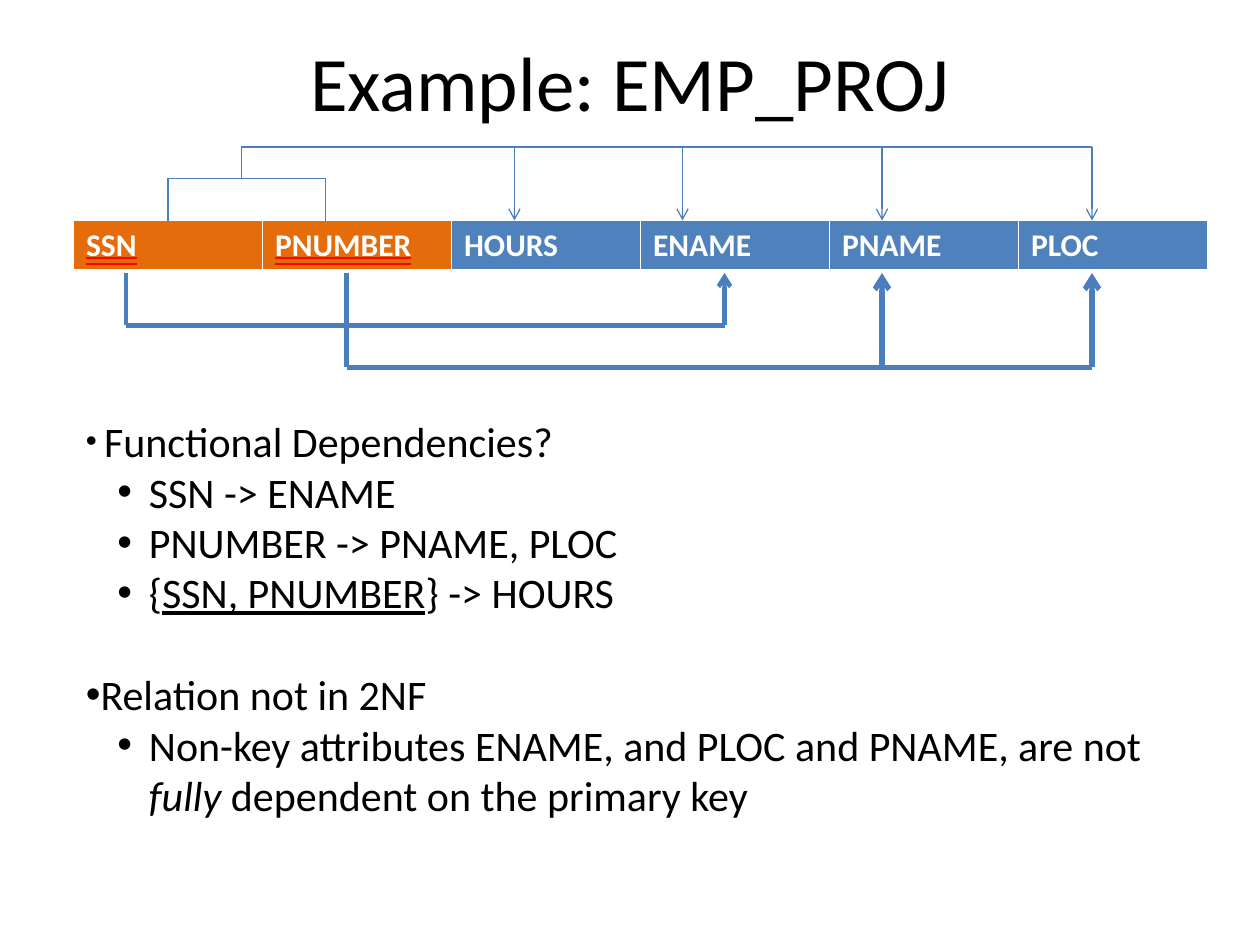
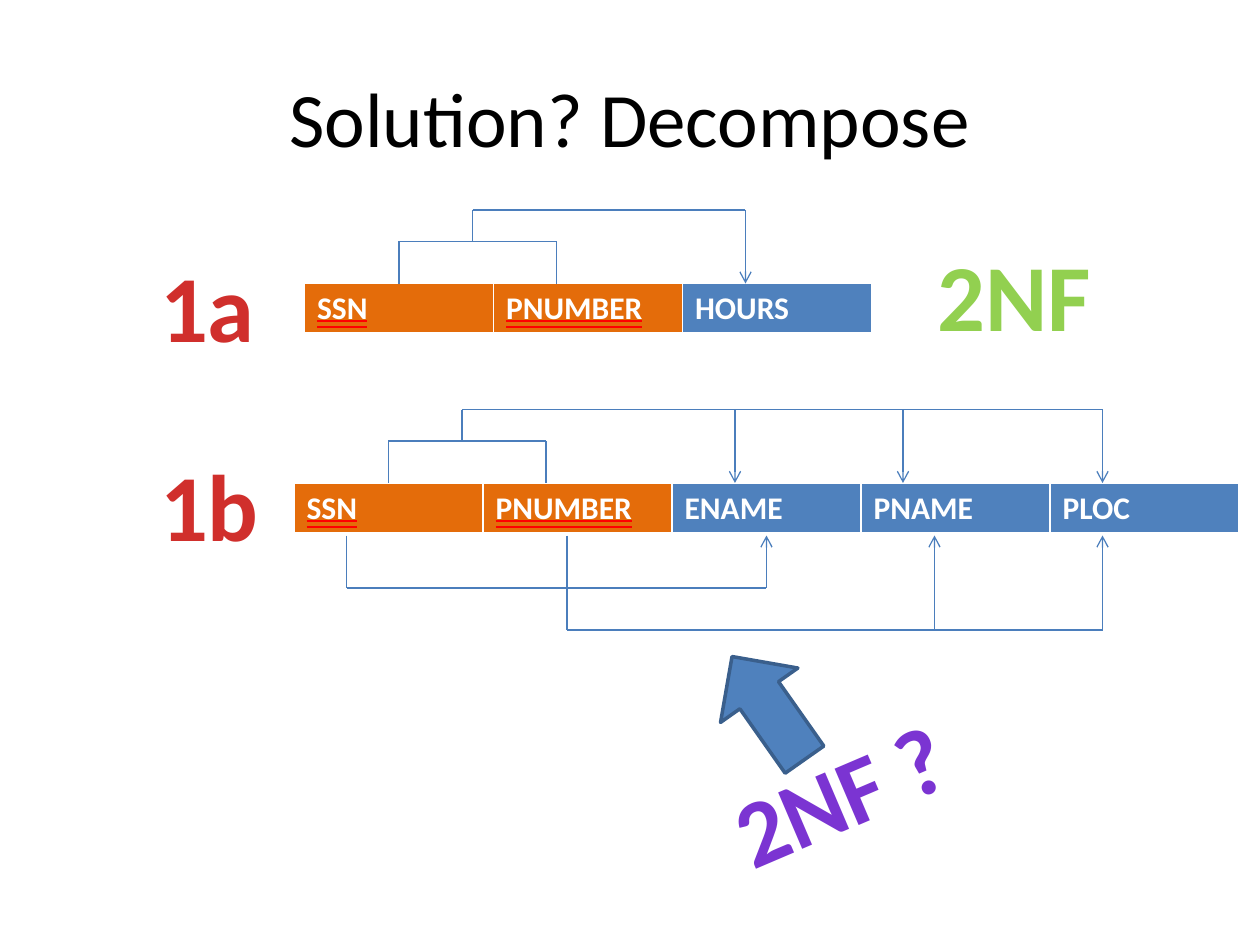
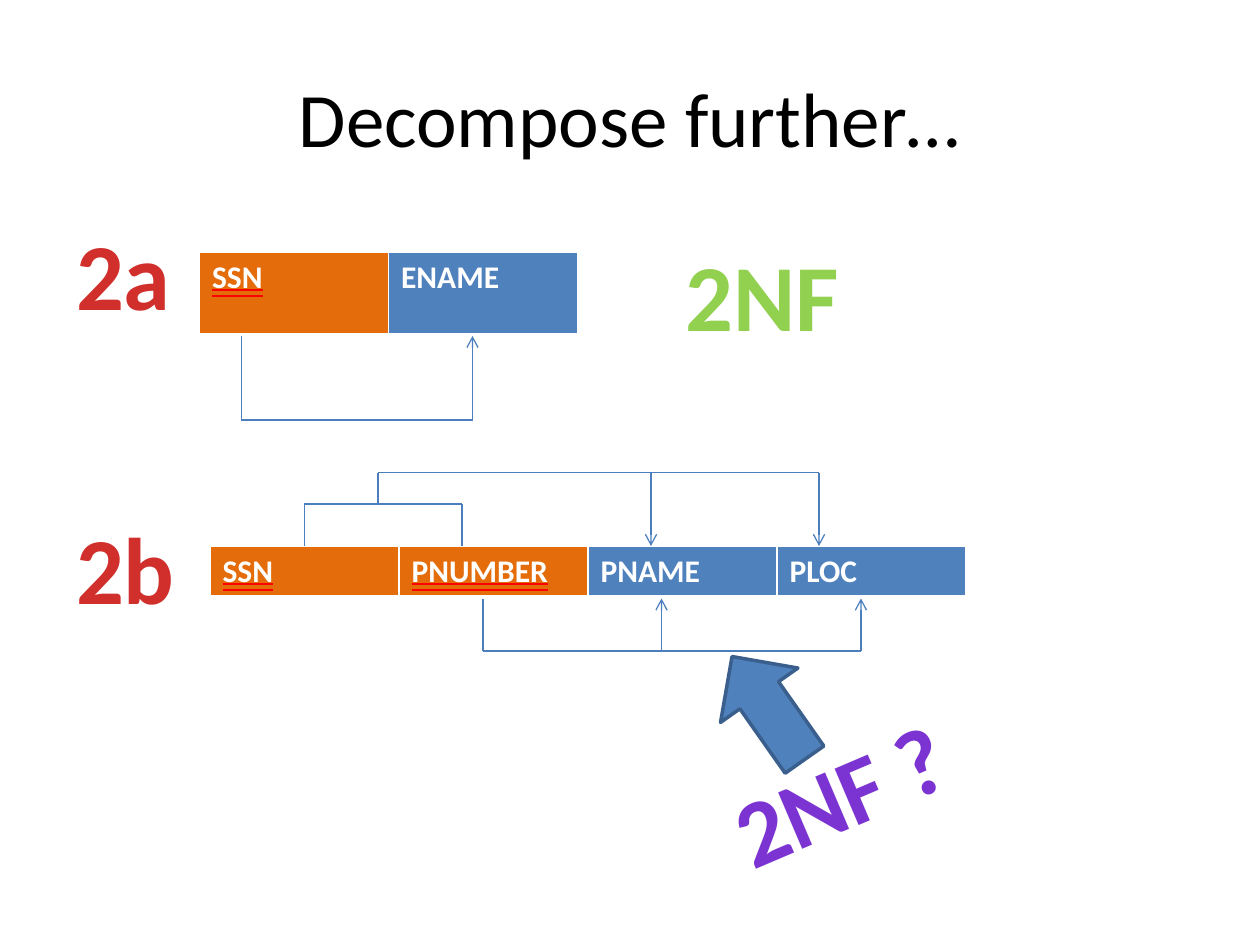
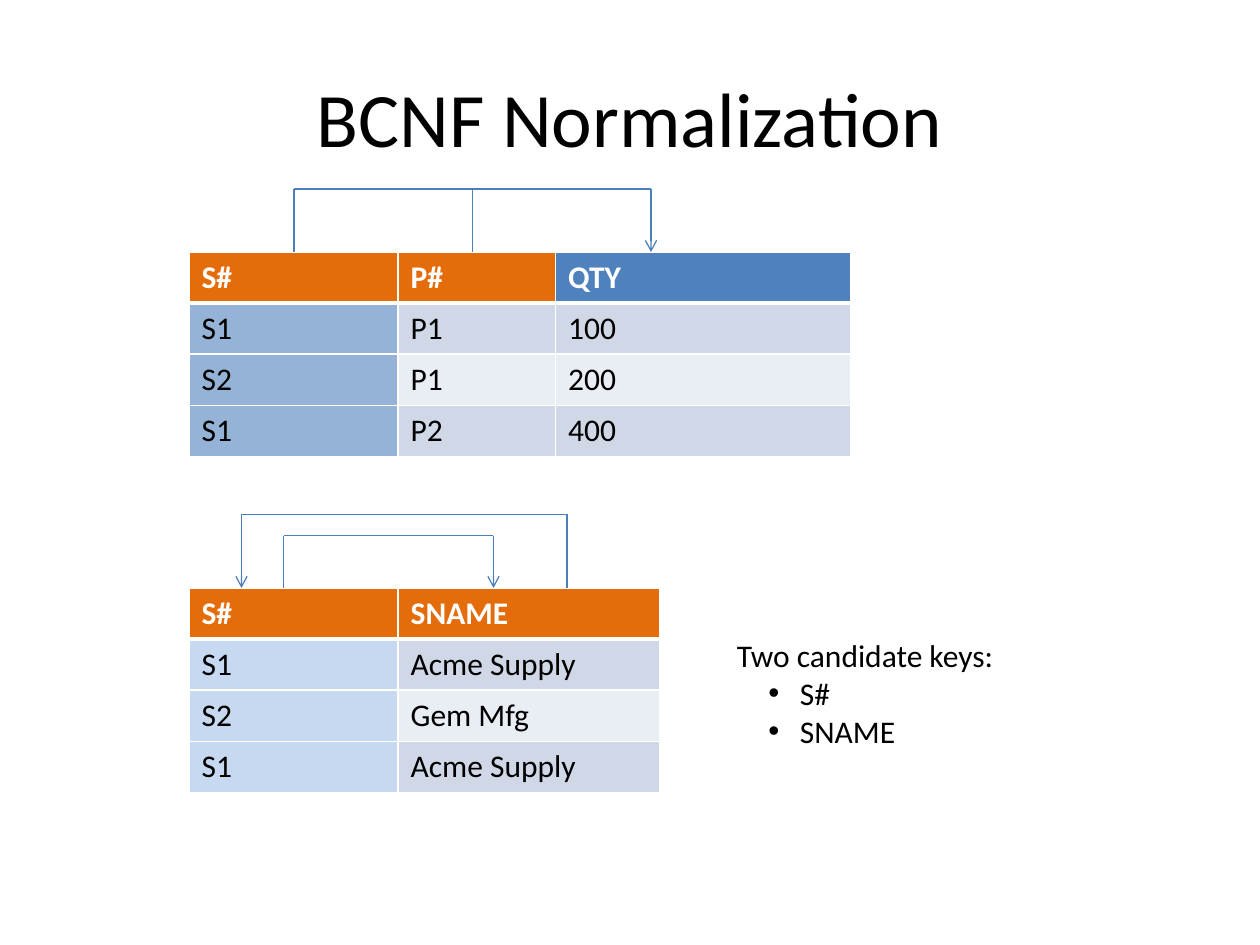
from dataclasses import dataclass

from lxml.etree import SubElement
from pptx import Presentation
from pptx.dml.color import RGBColor
from pptx.enum.shapes import MSO_CONNECTOR, MSO_SHAPE
from pptx.enum.text import MSO_ANCHOR, MSO_UNDERLINE, PP_ALIGN
from pptx.oxml import parse_xml
from pptx.oxml.ns import nsdecls, qn
from pptx.util import Pt


@dataclass(frozen=True)
class Theme:
    font: str = "Calibri"
    bullet_font: str = "Arial"
    title_size: float = 44
    label_size: float = 54
    body_size: float = 24
    small_size: float = 18
    black: str = "000000"
    white: str = "FFFFFF"
    key: str = "E46C0A"
    attribute: str = "4F81BD"
    key_underline: str = "FF0000"
    bands: tuple = ("D0D8E8", "E9EDF4")
    key_column: str = "95B3D7"
    light_key_column: str = "C6D9F1"
    connector: str = "4B7EBC"
    arrow_outline: str = "3A5F8C"
    approved: str = "92D050"
    red_gradient: tuple = ((0, "FC7C7A"), (75, "D02F2C"), (100, "C70500"))
    purple_gradient: tuple = (
        (0, "3D1B67"), (43, "7B34D2"), (48, "7330C4"), (100, "3D1B67"))
    purple_outline: str = "5E457C"


THEME = Theme()
LINE_WIDTH = 0.75
COLUMN_WIDTH = 108
ROW_HEIGHT = 29.2
LABEL_HEIGHT = 72.7
LINE_PITCH = 29.3


def rgb(value):
    return RGBColor.from_string(value)


def solid_fill_xml(color):
    return f'<a:solidFill {nsdecls("a")}><a:srgbClr val="{color}"/></a:solidFill>'


def gradient_xml(stops):
    stop_xml = "".join(
        f'<a:gs pos="{position * 1000}"><a:srgbClr val="{color}"/></a:gs>'
        for position, color in stops)
    return (f'<a:gradFill {nsdecls("a")}><a:gsLst>{stop_xml}</a:gsLst>'
            '<a:lin ang="5400000" scaled="0"/></a:gradFill>')


def write_text(paragraph, text, size=THEME.small_size, color=THEME.black, bold=False,
               italic=False, underline=None, underline_color=None, gradient=None,
               outline=None):
    run = paragraph.add_run()
    run.text = text
    font = run.font
    font.size, font.bold, font.italic = Pt(size), bold, italic
    font.underline = underline
    properties = run._r.get_or_add_rPr()
    if gradient:
        properties.append(parse_xml(gradient_xml(gradient)))
    else:
        font.color.rgb = rgb(color)
    if outline:
        properties.insert(0, parse_xml(
            f'<a:ln {nsdecls("a")} w="{Pt(0.71)}">{solid_fill_xml(outline)}</a:ln>'))
    if underline_color:
        properties.append(parse_xml(
            f'<a:uFill {nsdecls("a")}>{solid_fill_xml(underline_color)}</a:uFill>'))
    font.name = THEME.font


def add_text_frame(slide, left, top, width, height, wrap=True, rotation=0):
    box = slide.shapes.add_textbox(Pt(left), Pt(top), Pt(width), Pt(height))
    box.rotation = rotation
    box.text_frame.word_wrap = wrap
    return box.text_frame


def add_title(slide, text, top=21.6, height=90):
    frame = add_text_frame(slide, 36, top, 648, height)
    frame.vertical_anchor = MSO_ANCHOR.MIDDLE
    paragraph = frame.paragraphs[0]
    paragraph.alignment = PP_ALIGN.CENTER
    write_text(paragraph, text, size=THEME.title_size)


def add_label(slide, text, left, top, width, rotation=0, wrap=False, **text_format):
    frame = add_text_frame(slide, left, top, width, LABEL_HEIGHT, wrap, rotation)
    paragraph = frame.paragraphs[0]
    paragraph.alignment = PP_ALIGN.CENTER
    write_text(paragraph, text, size=THEME.label_size, bold=True, **text_format)


def add_bullet(paragraph, level=0):
    paragraph.level = level
    properties = paragraph._p.get_or_add_pPr()
    properties.set("marL", str(Pt(36 * level)))
    properties.set("indent", str(Pt(-18 * level)))
    SubElement(properties, qn("a:buFont"), typeface=THEME.bullet_font)
    SubElement(properties, qn("a:buChar"), char="•")


def add_outline(frame, lines):
    """Fill the frame with (level, runs) lines; level None has no bullet."""
    for index, (level, runs) in enumerate(lines):
        paragraph = frame.add_paragraph() if index else frame.paragraphs[0]
        if level is not None:
            add_bullet(paragraph, level)
        for text, text_format in runs:
            write_text(paragraph, text, **text_format)


def add_line(slide, start, end, width=LINE_WIDTH, arrow=False):
    line = slide.shapes.add_connector(
        MSO_CONNECTOR.STRAIGHT, *(Pt(value) for value in (*start, *end)))
    line.line.color.rgb = rgb(THEME.connector)
    line.line.width = Pt(width)
    if arrow:
        SubElement(line.line._get_or_add_ln(), qn("a:tailEnd"), type="arrow")
    SubElement(line._element.spPr, qn("a:effectLst"))


def add_dependency(slide, sources, targets, edge, depth, start=None, width=LINE_WIDTH):
    """Join sources to targets by a rail at depth from the table edge (negative: above)."""
    rail = edge + depth
    for x in sources:
        add_line(slide, (x, edge if start is None else start), (x, rail), width)
    ends = (*sources, *targets)
    add_line(slide, (min(ends), rail), (max(ends), rail), width)
    for x in targets:
        add_line(slide, (x, rail), (x, edge), width, arrow=True)


def add_key_dependency(slide, left, table_top, targets):
    """Bracket the two key columns and lead from the bracket to the targets."""
    add_dependency(slide, (left, left + 90), (), table_top, -24)
    add_dependency(slide, (left + 42,), targets, table_top, -42, start=table_top - 24)


def set_cell_borders(cell, top, bottom):
    properties = cell._tc.get_or_add_tcPr()
    for index, (side, width) in enumerate(
            (("L", 1), ("R", 1), ("T", top), ("B", bottom))):
        properties.insert(index, parse_xml(
            f'<a:ln{side} {nsdecls("a")} w="{Pt(width)}">'
            f'{solid_fill_xml(THEME.white)}</a:ln{side}>'))


def add_relation(slide, left, top, header, key_count, rows=(), widths=None,
                 row_height=ROW_HEIGHT, key_fill=None, underline_keys=True):
    widths = widths or [COLUMN_WIDTH] * len(header)
    table = slide.shapes.add_table(
        len(rows) + 1, len(header), Pt(left), Pt(top), Pt(sum(widths)),
        Pt(row_height * (len(rows) + 1))).table
    table.first_row = table.horz_banding = False
    for column, width in zip(table.columns, widths):
        column.width = Pt(width)
    for row_index, values in enumerate((header, *rows)):
        for column_index, text in enumerate(values):
            cell = table.cell(row_index, column_index)
            text_format = {}
            if row_index == 0:
                is_key = column_index < key_count
                fill = THEME.key if is_key else THEME.attribute
                text_format = {"color": THEME.white, "bold": True}
                if is_key and underline_keys:
                    text_format.update(underline=MSO_UNDERLINE.DOUBLE_LINE,
                                       underline_color=THEME.key_underline)
            elif column_index == 0:
                fill = key_fill
            else:
                fill = THEME.bands[(row_index - 1) % 2]
            cell.fill.solid()
            cell.fill.fore_color.rgb = rgb(fill)
            set_cell_borders(cell, top=3 if row_index == 1 else 1,
                             bottom=3 if row_index == 0 else 1)
            write_text(cell.text_frame.paragraphs[0], text, **text_format)


def add_normal_form_question(slide):
    add_label(slide, "2NF ?", 404, 417, 151, rotation=336.9, wrap=True,
              gradient=THEME.purple_gradient, outline=THEME.purple_outline)
    arrow = slide.shapes.add_shape(
        MSO_SHAPE.DOWN_ARROW, Pt(412), Pt(368.6), Pt(54), Pt(72))
    arrow.rotation = 144.9
    arrow.shadow.inherit = False
    arrow.fill.solid()
    arrow.fill.fore_color.rgb = rgb(THEME.attribute)
    arrow.line.color.rgb = rgb(THEME.arrow_outline)
    arrow.line.width = Pt(2)


def build_example(slide):
    add_title(slide, "Example: EMP_PROJ", top=12, height=68.4)
    add_relation(slide, 42, 126,
                 ("SSN", "PNUMBER", "HOURS", "ENAME", "PNAME", "PLOC"), 2)
    add_dependency(slide, (72,), (414,), 156, 30, width=2.5)
    add_dependency(slide, (198,), (504, 624), 156, 54, width=3)
    add_key_dependency(slide, 96, 126, (294, 390, 504, 624))

    body = {"size": THEME.body_size}
    frame = add_text_frame(slide, 42, 234, 636, 306)
    add_outline(frame, (
        (0, ((" ", {}), ("Functional Dependencies?", body))),
        (1, (("SSN -> ENAME", body),)),
        (1, (("PNUMBER -> PNAME, PLOC", body),)),
        (1, (("{", body), ("SSN, PNUMBER", {**body, "underline": True}),
             ("} -> HOURS", body))),
        (0, (("Relation not in 2NF", body),)),
        (1, (("Non-key attributes ENAME, and PLOC and PNAME, are not ", body),
             ("fully", {**body, "italic": True}),
             (" dependent on the primary key", body))),
    ))
    frame.paragraphs[4].space_before = Pt(LINE_PITCH)


def build_decomposition(slide):
    add_title(slide, "Solution? Decompose")
    add_label(slide, "1a", 84, 138, 69, gradient=THEME.red_gradient)
    add_relation(slide, 174, 162, ("SSN", "PNUMBER", "HOURS"), 2)
    add_key_dependency(slide, 228, 162, (426,))
    add_label(slide, "2NF", 528, 132, 103, color=THEME.approved)

    add_label(slide, "1b", 84, 252, 71.3, gradient=THEME.red_gradient)
    add_relation(slide, 168, 276, ("SSN", "PNUMBER", "ENAME", "PNAME", "PLOC"), 2)
    add_key_dependency(slide, 222, 276, (420, 516, 630))
    add_dependency(slide, (198,), (438,), 306, 30)
    add_dependency(slide, (324,), (534, 630), 306, 54)
    add_normal_form_question(slide)


def build_further_decomposition(slide):
    add_title(slide, "Decompose further…")
    add_label(slide, "2a", 36, 120, 69, gradient=THEME.red_gradient)
    add_relation(slide, 114, 144, ("SSN", "ENAME"), 1, row_height=47.5)
    add_dependency(slide, (138,), (270,), 192, 48)
    add_label(slide, "2NF", 384, 132, 103, color=THEME.approved)

    add_label(slide, "2b", 36, 288, 71.3, gradient=THEME.red_gradient)
    add_relation(slide, 120, 312, ("SSN", "PNUMBER", "PNAME", "PLOC"), 2)
    add_key_dependency(slide, 174, 312, (372, 468))
    add_dependency(slide, (276,), (378, 492), 342, 30)
    add_normal_form_question(slide)


def build_bcnf(slide):
    add_title(slide, "BCNF Normalization")
    add_relation(slide, 108, 144, ("S#", "P#", "QTY"), 2,
                 rows=(("S1", "P1", "100"), ("S2", "P1", "200"), ("S1", "P2", "400")),
                 widths=(119.5, 90, 168.5), key_fill=THEME.key_column,
                 underline_keys=False)
    add_dependency(slide, (168, 270), (372,), 144, -36)

    add_relation(slide, 108, 336, ("S#", "SNAME"), 2,
                 rows=(("S1", "Acme Supply"), ("S2", "Gem Mfg"), ("S1", "Acme Supply")),
                 widths=(119.5, 149.3), key_fill=THEME.light_key_column,
                 underline_keys=False)
    add_dependency(slide, (162,), (282,), 336, -30)
    add_dependency(slide, (324,), (138,), 336, -42)

    add_outline(add_text_frame(slide, 414, 360, 204, 72.7), (
        (None, (("Two candidate keys:", {}),)),
        (1, (("S#", {}),)),
        (1, (("SNAME", {}),)),
    ))


def main():
    presentation = Presentation()
    presentation.slide_width, presentation.slide_height = Pt(720), Pt(540)
    blank_layout = presentation.slide_layouts[6]
    for build in (build_example, build_decomposition,
                  build_further_decomposition, build_bcnf):
        build(presentation.slides.add_slide(blank_layout))
    presentation.save("out.pptx")


if __name__ == "__main__":
    main()
